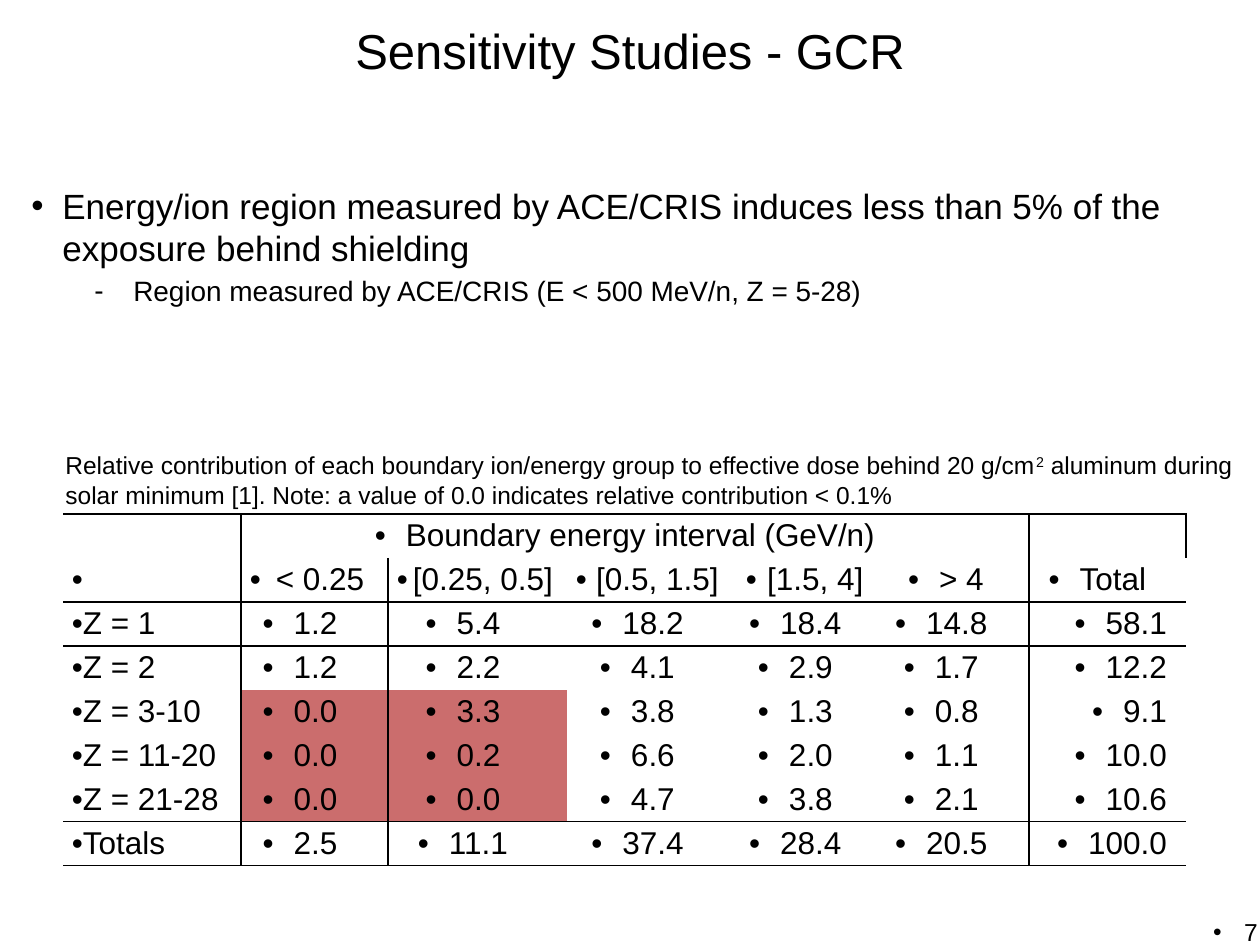
"""Build the slide on the sensitivity of exposure to GCR boundary groups."""
from dataclasses import dataclass

from lxml import etree
from pptx import Presentation
from pptx import util as u
from pptx.dml.color import RGBColor
from pptx.enum import text
from pptx.oxml import ns

EMU_PER_PX = 914400 / 126
BLACK = "000000"
HIGHLIGHT = "CB6D6D"
FONT = "Arial"
LEFT, CENTER, RIGHT = text.PP_ALIGN.LEFT, text.PP_ALIGN.CENTER, text.PP_ALIGN.RIGHT

BULLET_HANGING = 31
COLUMN_WIDTHS = [178, 147, 179, 170, 146, 146, 157]
ROW_HEIGHT = 44
ROWS = [
    ["", "Boundary energy interval (GeV/n)", "", "", "", "", ""],
    [" ", "< 0.25", "[0.25, 0.5]", "[0.5, 1.5]", "[1.5, 4]", "> 4", "Total"],
    ["Z = 1", "1.2", "5.4", "18.2", "18.4", "14.8", "58.1"],
    ["Z = 2", "1.2", "2.2", "4.1", "2.9", "1.7", "12.2"],
    ["Z = 3-10", "0.0", "3.3", "3.8", "1.3", "0.8", "9.1"],
    ["Z = 11-20", "0.0", "0.2", "6.6", "2.0", "1.1", "10.0"],
    ["Z = 21-28", "0.0", "0.0", "4.7", "3.8", "2.1", "10.6"],
    ["Totals", "2.5", "11.1", "37.4", "28.4", "20.5", "100.0"],
]
HEADER_ROWS = 2
RULED_ROW_EDGES = {0, 2, 3, 7, 8}
RULED_COLUMN_EDGES = {1: range(8), 2: range(1, 8), 6: range(8), 7: range(1)}
MEASURED_ROWS, MEASURED_COLUMNS = range(4, 7), range(1, 3)


@dataclass(frozen=True)
class Area:
    """A rectangle on the page in px."""
    left: int
    top: int
    width: int
    height: int


def px(length: int) -> u.Emu:
    """Turn px into EMU."""
    return u.Emu(round(length * EMU_PER_PX))


def color(value: str) -> RGBColor:
    """Turn a hex string into a colour."""
    return RGBColor.from_string(value)


def place(box, area: Area) -> None:
    """Move a shape to an area."""
    box.left, box.top = px(area.left), px(area.top)
    box.width, box.height = px(area.width), px(area.height)


def add_box(page, area: Area):
    """Add a wrapping text box and return its text frame."""
    box = page.shapes.add_textbox(*map(px, (area.left, area.top, area.width, area.height)))
    box.text_frame.word_wrap = True
    return box.text_frame


def write(para, content: str, *, size: int, align=LEFT, bullet: str = "",
          margin: int = 0, hanging: int = 0, before: float = 0) -> None:
    """Fill a paragraph with formatted text."""
    para.alignment = align
    para.space_before = u.Pt(before)
    properties = para._p.get_or_add_pPr()
    properties.set("marL", str(px(margin)))
    properties.set("indent", str(-px(hanging)))
    if bullet:
        etree.SubElement(properties, ns.qn("a:buFont"), typeface=FONT)
        etree.SubElement(properties, ns.qn("a:buChar"), char=bullet)
    else:
        etree.SubElement(properties, ns.qn("a:buNone"))
    add_span(para, content, size=size)


def add_span(para, content: str, *, size: int, baseline: int = 0) -> None:
    """Append a run, raised by a baseline percentage."""
    span = para.add_run()
    span.text = content
    span.font.name, span.font.size = FONT, u.Pt(size)
    span.font.color.rgb = color(BLACK)
    if baseline:
        span.font._element.set("baseline", str(baseline * 1000))


def set_borders(cell, row: int, column: int) -> None:
    """Draw the ruled edges of a cell and clear the others."""
    edges = {
        "a:lnL": row in RULED_COLUMN_EDGES.get(column, ()),
        "a:lnR": row in RULED_COLUMN_EDGES.get(column + 1, ()),
        "a:lnT": row in RULED_ROW_EDGES,
        "a:lnB": row + 1 in RULED_ROW_EDGES,
    }
    properties = cell._tc.get_or_add_tcPr()
    for position, (tag, ruled) in enumerate(edges.items()):
        line = etree.Element(ns.qn(tag), w=str(u.Pt(1)))
        if ruled:
            fill = etree.SubElement(line, ns.qn("a:solidFill"))
            etree.SubElement(fill, ns.qn("a:srgbClr"), val=BLACK)
        else:
            etree.SubElement(line, ns.qn("a:noFill"))
        properties.insert(position, line)


def fill_cell(cell, row: int, column: int) -> None:
    """Write and format one table cell."""
    is_number = row >= HEADER_ROWS and column > 0
    cell.margin_left = px(10 if is_number else 9)
    cell.margin_right = px(19 if is_number else 9)
    cell.margin_top = cell.margin_bottom = 0
    cell.vertical_anchor = text.MSO_ANCHOR.MIDDLE
    if row in MEASURED_ROWS and column in MEASURED_COLUMNS:
        cell.fill.solid()
        cell.fill.fore_color.rgb = color(HIGHLIGHT)
    else:
        cell.fill.background()
    set_borders(cell, row, column)
    content = ROWS[row][column]
    if not content:
        return
    if column == 0:
        align = LEFT
    elif is_number and column == len(COLUMN_WIDTHS) - 1:
        align = RIGHT
    else:
        align = CENTER
    write(cell.text_frame.paragraphs[0], content, size=18, align=align,
          bullet="•", hanging=BULLET_HANGING)


def add_dose_table(page, left: int, top: int) -> None:
    """Add the table of relative contributions."""
    table = page.shapes.add_table(
        len(ROWS), len(COLUMN_WIDTHS), px(left), px(top),
        px(sum(COLUMN_WIDTHS)), px(ROW_HEIGHT * len(ROWS))).table
    table.first_row = table.horz_banding = False
    for column, width in zip(table.columns, COLUMN_WIDTHS):
        column.width = px(width)
    for row in table.rows:
        row.height = px(ROW_HEIGHT)
    table.cell(0, 1).merge(table.cell(0, 5))
    for row, contents in enumerate(ROWS):
        for column in range(len(contents)):
            fill_cell(table.cell(row, column), row, column)


def main() -> None:
    """Build and save the deck."""
    deck = Presentation()
    deck.slide_width, deck.slide_height = u.Inches(10), u.Inches(7.5)
    page = deck.slides.add_slide(deck.slide_layouts[5])

    title = page.shapes.title
    place(title, Area(0, 14, 1260, 72))
    title.text_frame.vertical_anchor = text.MSO_ANCHOR.MIDDLE
    write(title.text_frame.paragraphs[0], "Sensitivity Studies - GCR", size=28, align=CENTER)

    body = add_box(page, Area(19, 178, 1221, 179))
    write(body.paragraphs[0],
          "Energy/ion region measured by ACE/CRIS induces less than 5% of the exposure behind shielding",
          size=20, bullet="•", margin=31, hanging=BULLET_HANGING)
    write(body.add_paragraph(), "Region measured by ACE/CRIS (E < 500 MeV/n, Z = 5-28)",
          size=16, bullet="-", margin=102, hanging=39, before=3.2)

    add_dose_table(page, 63, 514)

    caption = add_box(page, Area(53, 444, 1197, 72)).paragraphs[0]
    write(caption, "Relative contribution of each boundary ion/energy group to effective dose behind 20 g/cm",
          size=14)
    add_span(caption, "2", size=14, baseline=30)
    add_span(caption, " aluminum during solar minimum [1]. Note: a value of 0.0 indicates "
             "relative contribution < 0.1%", size=14)

    number = add_box(page, Area(977, 911, 293, 66))
    write(number.paragraphs[0], "7", size=14, align=RIGHT, bullet="•", hanging=BULLET_HANGING)

    deck.save("out.pptx")


if __name__ == "__main__":
    main()
